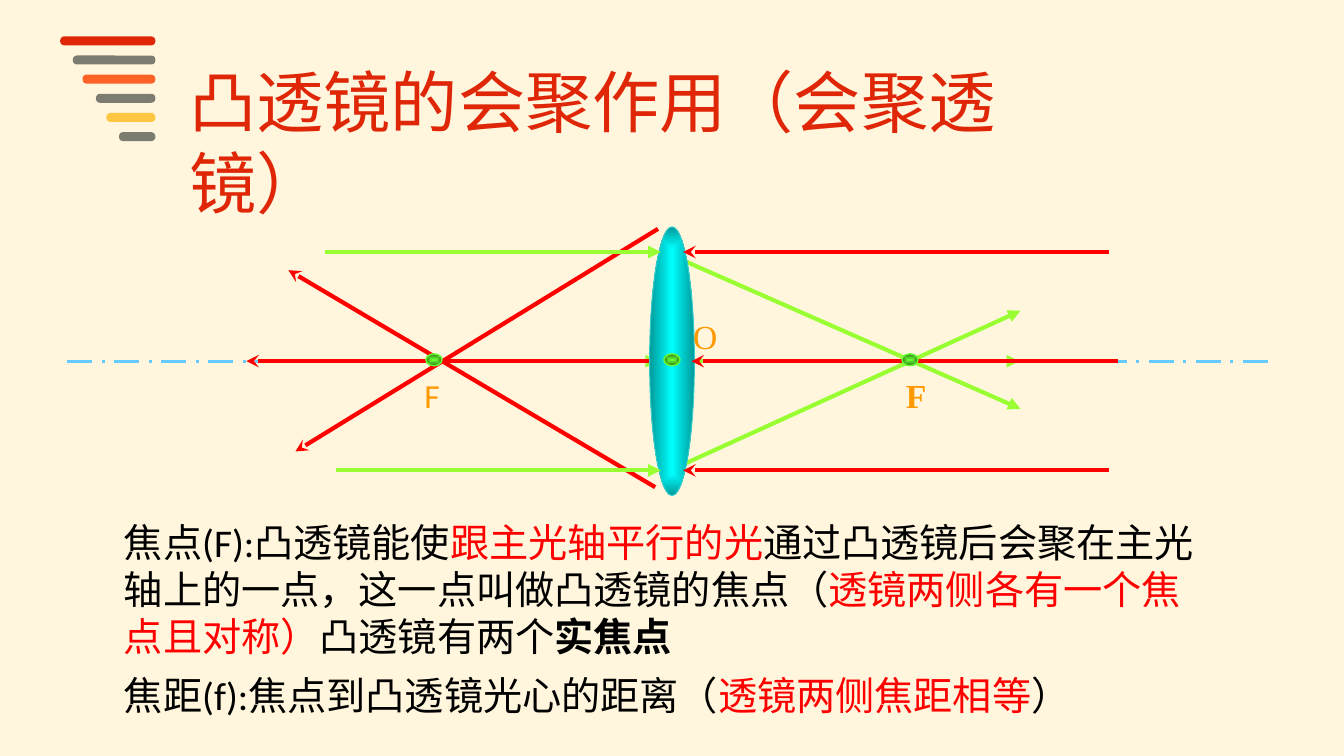
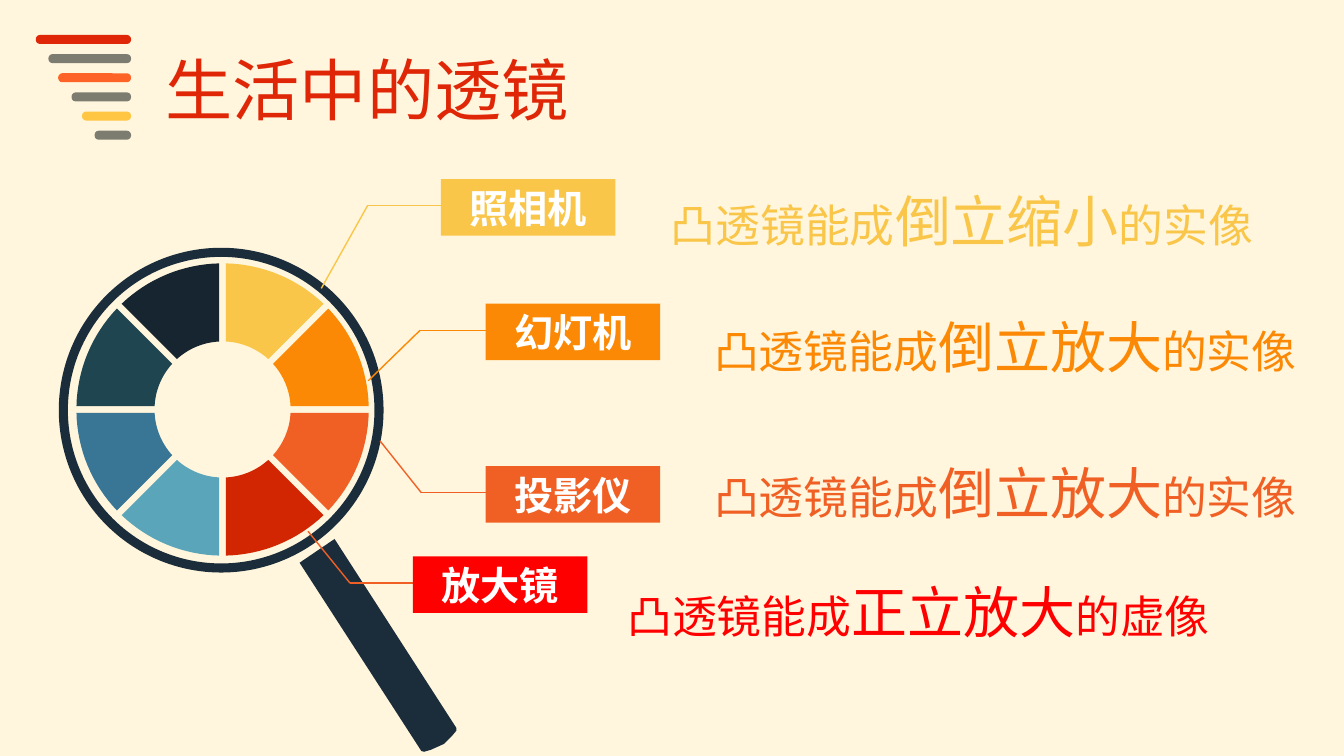
from math import asin, cos, pi, sin

from lxml.etree import SubElement
from pptx import Presentation
from pptx.dml.color import RGBColor
from pptx.enum.dml import MSO_LINE
from pptx.enum.shapes import MSO_CONNECTOR, MSO_SHAPE
from pptx.enum.text import MSO_ANCHOR, MSO_AUTO_SIZE, PP_ALIGN
from pptx.oxml.ns import qn
from pptx.util import Pt

CREAM = RGBColor(0xFF, 0xF6, 0xDD)
TITLE_RED = RGBColor(0xDF, 0x27, 0x08)
GREY = RGBColor(0x7C, 0x7C, 0x70)
BAR_ORANGE = RGBColor(0xFD, 0x63, 0x26)
BAR_YELLOW = RGBColor(0xFE, 0xC6, 0x42)
BLACK = RGBColor(0x00, 0x00, 0x00)
WHITE = RGBColor(0xFF, 0xFF, 0xFF)
RED = RGBColor(0xFF, 0x00, 0x00)
RAY_GREEN = RGBColor(0x99, 0xFF, 0x33)
AXIS_BLUE = RGBColor(0x66, 0xCC, 0xFF)
LABEL_ORANGE = RGBColor(0xFF, 0x99, 0x00)
LENS_CYAN = RGBColor(0x00, 0xFF, 0xFF)
LENS_TEAL = RGBColor(0x00, 0x99, 0x99)
LENS_EDGE = RGBColor(0x33, 0xCC, 0xCC)
DOT_GREEN = RGBColor(0x66, 0xFF, 0x33)
DOT_DARK = RGBColor(0x2F, 0x76, 0x18)
NAVY = RGBColor(0x1B, 0x2D, 0x3A)
YELLOW = RGBColor(0xF9, 0xC6, 0x49)
ORANGE = RGBColor(0xFB, 0x89, 0x05)
CORAL = RGBColor(0xF0, 0x60, 0x25)
WHEEL_COLORS = [
    YELLOW, ORANGE, CORAL, RGBColor(0xD2, 0x26, 0x02),
    RGBColor(0x5A, 0xA5, 0xB9), RGBColor(0x39, 0x75, 0x94),
    RGBColor(0x1E, 0x45, 0x50), RGBColor(0x17, 0x25, 0x31),
]
SANS = "Noto Sans CJK SC"


def write_text(text_frame, font_name, parts, wrap=True):
    """Fill the first paragraph with runs of (text, size, color, bold)."""
    text_frame.word_wrap = wrap
    text_frame.auto_size = MSO_AUTO_SIZE.NONE
    for text, size, color, bold in parts:
        run = text_frame.paragraphs[0].add_run()
        run.text = text
        run.font.name = font_name
        run.font.size = Pt(size)
        run.font.bold = bold
        run.font.color.rgb = color
        SubElement(run.font._element, qn("a:ea"), typeface="Calibri")


def add_line(slide, ends, color, width, arrow=None):
    line = slide.shapes.add_connector(
        MSO_CONNECTOR.STRAIGHT, *[Pt(value) for value in ends])
    line.line.color.rgb = color
    line.line.width = Pt(width)
    if arrow:
        SubElement(line.line._get_or_add_ln(), qn("a:tailEnd"), type=arrow)
    return line


presentation = Presentation()
presentation.slide_width, presentation.slide_height = Pt(960), Pt(540)
background = presentation.slide_master.background.fill
background.solid()
background.fore_color.rgb = CREAM
plain_shapes = []

# Titles and stacked bars on both slides
bars = [(68, TITLE_RED), (59, GREY), (52, BAR_ORANGE),
        (42.5, GREY), (35, BAR_YELLOW), (26, GREY)]
headings = [
    ("凸透镜的会聚作用（会聚透镜）", SANS, 128, 39.6, 684, 111, 26),
    ("生活中的透镜", "Arial", 111, 31, 305, 93.6, 25),
]
for text, font_name, left, top, width, bars_right, bars_top in headings:
    slide = presentation.slides.add_slide(presentation.slide_layouts[5])
    title = slide.shapes.title
    title.left, title.top = Pt(left), Pt(top)
    title.width, title.height = Pt(width), Pt(65.5)
    write_text(title.text_frame, font_name, [(text, 48, TITLE_RED, False)])
    title.text_frame.vertical_anchor = MSO_ANCHOR.TOP
    title.text_frame.paragraphs[0].alignment = PP_ALIGN.LEFT
    for row, (bar_width, color) in enumerate(bars):
        bar = slide.shapes.add_shape(
            MSO_SHAPE.ROUNDED_RECTANGLE, Pt(bars_right - bar_width),
            Pt(bars_top + row * 13.68), Pt(bar_width), Pt(6.4))
        bar.adjustments[0] = 0.45
        plain_shapes.append((bar, color))
lens_slide, uses_slide = presentation.slides

# Slide 1: optical axis and the rays behind the lens
CENTER_X, AXIS_Y, RAY_OFFSET = 480, 258, 78
TOP_Y, BOTTOM_Y = AXIS_Y - RAY_OFFSET, AXIS_Y + RAY_OFFSET
axis = add_line(lens_slide, (48, AXIS_Y, 912, AXIS_Y), AXIS_BLUE, 2.25)
axis.line.dash_style = MSO_LINE.LONG_DASH_DOT
arrows = {RAY_GREEN: "triangle", RED: "stealth"}
rays_behind = [
    (RAY_GREEN, (488, AXIS_Y, 728, AXIS_Y)),
    (RAY_GREEN, (222, AXIS_Y, 470, AXIS_Y)),
    (RED, (CENTER_X, AXIS_Y, 176, AXIS_Y)),
    (RED, (468, 348, 206, 193)),
    (RED, (470, 163.5, 211, 322.5)),
    (RAY_GREEN, (472, 179, 729, 292)),
    (RAY_GREEN, (472, 339, 729, 222)),
]
rays_in_front = [
    (RAY_GREEN, (232, TOP_Y, 472, TOP_Y)),
    (RAY_GREEN, (240, BOTTOM_Y, 472, BOTTOM_Y)),
    (RED, (798.5, AXIS_Y, 494, AXIS_Y)),
    (RED, (792, TOP_Y, 488, TOP_Y)),
    (RED, (792, BOTTOM_Y, 488, BOTTOM_Y)),
]
for color, ends in rays_behind:
    add_line(lens_slide, ends, color, 3, arrows[color])

# Lens, then the rays in front of it, then the foci and optical centre
lens = (CENTER_X, 258, 32, 192, LENS_CYAN, LENS_TEAL, LENS_EDGE, 0.75)
dots = [(x, 257, 11.5, 8.6, DOT_GREEN, DOT_DARK, DOT_GREEN, 1)
        for x in (CENTER_X - 170, CENTER_X, CENTER_X + 170)]
for x, y, width, height, inner, outer, edge, edge_width in [lens] + dots:
    ellipse = lens_slide.shapes.add_shape(
        MSO_SHAPE.OVAL, Pt(x - width / 2), Pt(y - height / 2),
        Pt(width), Pt(height))
    ellipse.line.color.rgb = edge
    ellipse.line.width = Pt(edge_width)
    ellipse.fill.gradient()
    for stop, color in zip(ellipse.fill.gradient_stops, (inner, outer)):
        stop.color.rgb = color
    gradient = ellipse._element.spPr.find(qn("a:gradFill"))
    gradient.remove(gradient.find(qn("a:lin")))
    radial = SubElement(gradient, qn("a:path"), path="shape")
    SubElement(radial, qn("a:fillToRect"),
               l="50000", t="50000", r="50000", b="50000")
    if height == 192:
        for color, ends in rays_in_front:
            add_line(lens_slide, ends, color, 3, arrows[color])

# Point labels and definitions
text_boxes = [
    (488, 222, 48, 36, "Times New Roman", [("O", 24, LABEL_ORANGE, False)]),
    (640, 264, 64, 36, "Times New Roman", [("F", 24, LABEL_ORANGE, True)]),
    (296, 264, 26, 36, "Calibri", [("F", 24, LABEL_ORANGE, False)]),
    (81.4, 366.5, 782, 109, "Calibri", [
        ("焦点(F):凸透镜能使", 28, BLACK, False),
        ("跟主光轴平行的光", 28, RED, False),
        ("通过凸透镜后会聚在主光轴上的一点，这一点叫做凸透镜的焦点（",
         28, BLACK, False),
        ("透镜两侧各有一个焦点且对称）", 28, RED, False),
        ("凸透镜有两个", 28, BLACK, False),
        ("实焦点", 28, BLACK, True),
    ]),
    (81.4, 476, 705, 41, "Calibri", [
        ("焦距(f):焦点到凸透镜光心的距离（", 28, BLACK, False),
        ("透镜两侧焦距相等", 28, RED, False),
        ("）", 28, BLACK, False),
    ]),
]
for left, top, width, height, font_name, parts in text_boxes:
    box = lens_slide.shapes.add_textbox(
        Pt(left), Pt(top), Pt(width), Pt(height))
    write_text(box.text_frame, font_name, parts)

# Slide 2: magnifier rim
rim = uses_slide.shapes.add_shape(
    MSO_SHAPE.DONUT, Pt(42), Pt(177), Pt(232), Pt(232))
rim.adjustments[0] = 0.028
plain_shapes.append((rim, NAVY))

# Outlines: eight wheel sectors with even gaps, and the handle
WHEEL_X, WHEEL_Y, INNER, OUTER, HALF_GAP, STEPS = 159, 292.5, 48.6, 104.4, 2.4, 16
outlines = []
for index, color in enumerate(WHEEL_COLORS):
    start, end = [-pi / 2 + (index + side) * pi / 4 for side in (0, 1)]
    points = []
    for radius, order in ((OUTER, 1), (INNER, -1)):
        trim = asin(HALF_GAP / radius)
        sweep = end - start - 2 * trim
        angles = [start + trim + sweep * step / STEPS
                  for step in range(STEPS + 1)]
        points += [(WHEEL_X + radius * cos(angle), WHEEL_Y + radius * sin(angle))
                   for angle in angles[::order]]
    outlines.append((points, color))
handle = [(214, 402), (239, 385), (326, 520), (326, 522), (323, 525.5),
          (317, 531.5), (308, 535.5), (303, 537), (301, 536.5)]
outlines.append((handle, NAVY))
for points, color in outlines:
    corners = [(Pt(x), Pt(y)) for x, y in points]
    builder = uses_slide.shapes.build_freeform(*corners[0], scale=1.0)
    builder.add_line_segments(corners[1:], close=True)
    plain_shapes.append((builder.convert_to_shape(), color))

# Callouts: leader, tag and image description
callouts = [
    ("照相机", "Calibri", YELLOW, YELLOW, (229.5, 206), 262.5, (315, 128),
     "倒立缩小", "的实像", SANS, (472, 130, 458)),
    ("幻灯机", "Calibri", ORANGE, ORANGE, (263, 272), 300, (347, 217),
     "倒立放大", "的实像", SANS, (503, 220, 440)),
    ("投影仪", "Arial Narrow", CORAL, CORAL, (271.5, 315), 301, (347, 333),
     "倒立放大", "的实像", SANS, (503, 324, 440)),
    ("放大镜", "Arial Narrow", RED, CORAL, (220, 379.5), 250, (295, 397.5),
     "正立放大", "的虚像", "Calibri", (441, 409, 435)),
]
for (name, tag_font, color, line_color, start, elbow_x, (tag_left, tag_top),
     emphasis, ending, font_name, (left, top, width)) in callouts:
    line_y = tag_top + 19
    add_line(uses_slide, (*start, elbow_x, line_y), line_color, 1)
    add_line(uses_slide, (elbow_x, line_y, tag_left, line_y), line_color, 1)
    tag = uses_slide.shapes.add_shape(
        MSO_SHAPE.RECTANGLE, Pt(tag_left), Pt(tag_top), Pt(124.6), Pt(40.3))
    write_text(tag.text_frame, tag_font, [(name, 28, WHITE, True)])
    tag.text_frame.paragraphs[0].alignment = PP_ALIGN.CENTER
    plain_shapes.append((tag, color))
    box = uses_slide.shapes.add_textbox(Pt(left), Pt(top), Pt(width), Pt(55.4))
    write_text(box.text_frame, font_name, [
        ("凸透镜能成", 32, color, False),
        (emphasis, 40, color, False),
        (ending, 32, color, False),
    ])

# Flat fills without outlines, and no shadows anywhere
for shape, color in plain_shapes:
    shape.fill.solid()
    shape.fill.fore_color.rgb = color
    shape.line.fill.background()
for slide in presentation.slides:
    for shape in slide.shapes:
        SubElement(shape._element.spPr, qn("a:effectLst"))

presentation.save("out.pptx")
